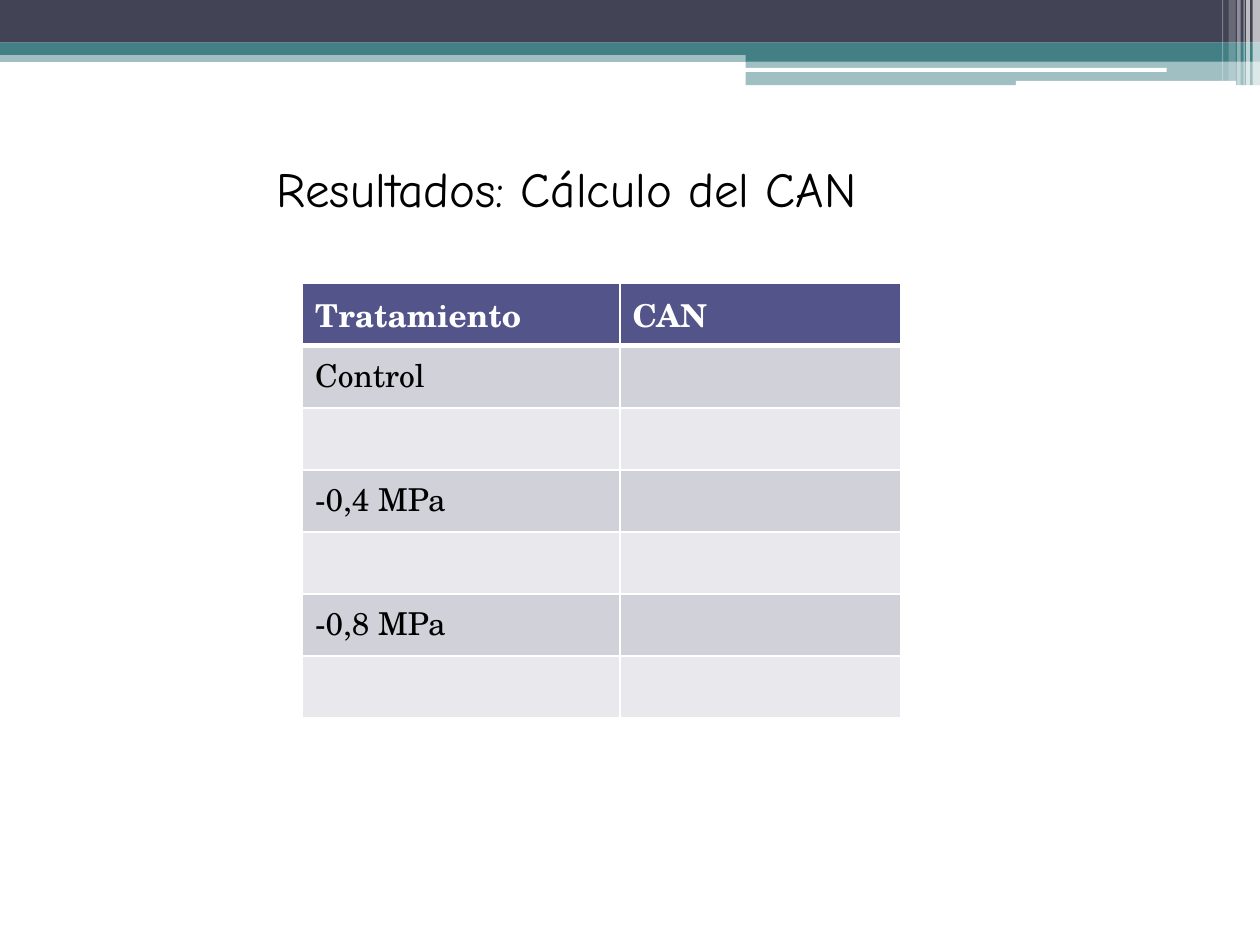
from pptx import Presentation
from pptx.dml.color import RGBColor
from pptx.enum.shapes import MSO_SHAPE
from pptx.enum.text import MSO_ANCHOR, PP_ALIGN
from pptx.oxml.ns import qn
from pptx.util import Cm, Pt
from lxml import etree

RECTANGLE = MSO_SHAPE.RECTANGLE
ROUNDED = MSO_SHAPE.ROUNDED_RECTANGLE
CENTER = PP_ALIGN.CENTER
MIDDLE = MSO_ANCHOR.MIDDLE

TITLE_FONT = "Comic Neue"
TABLE_FONT = "TeX Gyre Schola"
WHITE, BLACK = "FFFFFF", "000000"
SLATE, TEAL = "424456", "438086"
HEADER_FILL = "53548A"
BAND_FILLS = ("D1D1DA", "E9E9ED")

SLIDE_WIDTH, SLIDE_HEIGHT = 25.4, 19.05

# Left, top, width, height in cm, then colour and opacity in percent
HEADER_BANDS = [
    (0, 1.02, SLIDE_WIDTH, 0.23, TEAL, 50),
    (0, 0, SLIDE_WIDTH, 0.86, SLATE, 100),
    (0, 0.86, SLIDE_WIDTH, 0.25, TEAL, 100),
    (15.03, 0.99, 10.37, 0.25, TEAL, 100),
    (15.03, 1.23, 10.37, 0.49, TEAL, 50),
]
WHITE_BARS = [
    (15.02, 1.37, 8.5, 0.08, WHITE, 100),
    (20.48, 1.63, 4.44, 0.1, WHITE, 100),
]
# Left, width, height in cm, then opacity in percent
CORNER_STRIPES = [
    (25.25, 0.15, 1.73, 65),
    (25.12, 0.08, 1.73, 65),
    (25.07, 0.02, 1.73, 60),
    (24.94, 0.07, 1.73, 40),
    (24.77, 0.14, 1.63, 20),
    (24.64, 0.02, 1.63, 30),
]

ROWS = [
    ("Tratamiento", "CAN"),
    ("Control", ""),
    ("", ""),
    ("-0,4 MPa", ""),
    ("", ""),
    ("-0,8 MPa", ""),
    ("", ""),
]
COLUMN_WIDTHS = (6.4, 5.66)
ROW_HEIGHT = 1.25


def color(value):
    return RGBColor.from_string(value)


def add_bar(slide, left, top, width, height, fill, opacity, kind=RECTANGLE):
    shape = slide.shapes.add_shape(kind, Cm(left), Cm(top), Cm(width), Cm(height))
    shape.shadow.inherit = False
    shape.line.fill.background()
    shape.fill.solid()
    shape.fill.fore_color.rgb = color(fill)
    if opacity < 100:
        rgb = shape.fill._xPr.find(f".//{qn('a:srgbClr')}")
        etree.SubElement(rgb, qn("a:alpha"), val=str(opacity * 1000))


def add_header(slide):
    for band in HEADER_BANDS:
        add_bar(slide, *band)
    for bar in WHITE_BARS:
        add_bar(slide, *bar, kind=ROUNDED)
    for left, width, height, opacity in CORNER_STRIPES:
        add_bar(slide, left, 0, width, height, WHITE, opacity)


def format_title(title, text):
    title.left, title.top = Cm(1.09), Cm(3.07)
    title.width, title.height = Cm(21), Cm(1.45)
    title.text_frame.text = text
    title.text_frame.vertical_anchor = MIDDLE
    paragraph = title.text_frame.paragraphs[0]
    paragraph.alignment = CENTER
    paragraph.space_before = Pt(14)
    paragraph.font.name = TITLE_FONT
    paragraph.font.size = Pt(28)
    paragraph.font.color.rgb = color(BLACK)


def set_borders(cell, top, bottom):
    """Draw white cell borders; top and bottom are widths in points."""
    properties = cell._tc.get_or_add_tcPr()
    for side, width in (("L", 1), ("R", 1), ("T", top), ("B", bottom)):
        line = etree.SubElement(properties, qn(f"a:ln{side}"), w=str(Pt(width)))
        fill = etree.SubElement(line, qn("a:solidFill"))
        etree.SubElement(fill, qn("a:srgbClr"), val=WHITE)


def format_cell(cell, text, row):
    is_header = row == 0
    set_borders(cell, top=3 if row == 1 else 1, bottom=3 if is_header else 1)
    cell.fill.solid()
    cell.fill.fore_color.rgb = color(HEADER_FILL if is_header else BAND_FILLS[(row - 1) % 2])
    cell.text = text
    font = cell.text_frame.paragraphs[0].font
    font.name = TABLE_FONT
    font.size = Pt(18)
    font.bold = is_header
    font.color.rgb = color(WHITE if is_header else BLACK)


def add_results_table(slide):
    table = slide.shapes.add_table(
        len(ROWS), len(COLUMN_WIDTHS), Cm(6.1), Cm(5.72),
        Cm(sum(COLUMN_WIDTHS)), Cm(ROW_HEIGHT * len(ROWS))).table
    for column, width in zip(table.columns, COLUMN_WIDTHS):
        column.width = Cm(width)
    for row, texts in enumerate(ROWS):
        table.rows[row].height = Cm(ROW_HEIGHT)
        for column, text in enumerate(texts):
            format_cell(table.cell(row, column), text, row)


def main():
    presentation = Presentation()
    presentation.slide_width = Cm(SLIDE_WIDTH)
    presentation.slide_height = Cm(SLIDE_HEIGHT)
    slide = presentation.slides.add_slide(presentation.slide_layouts[5])
    add_header(slide)
    format_title(slide.shapes.title, "Resultados: Cálculo del CAN ")
    add_results_table(slide)
    presentation.save("out.pptx")


if __name__ == "__main__":
    main()
